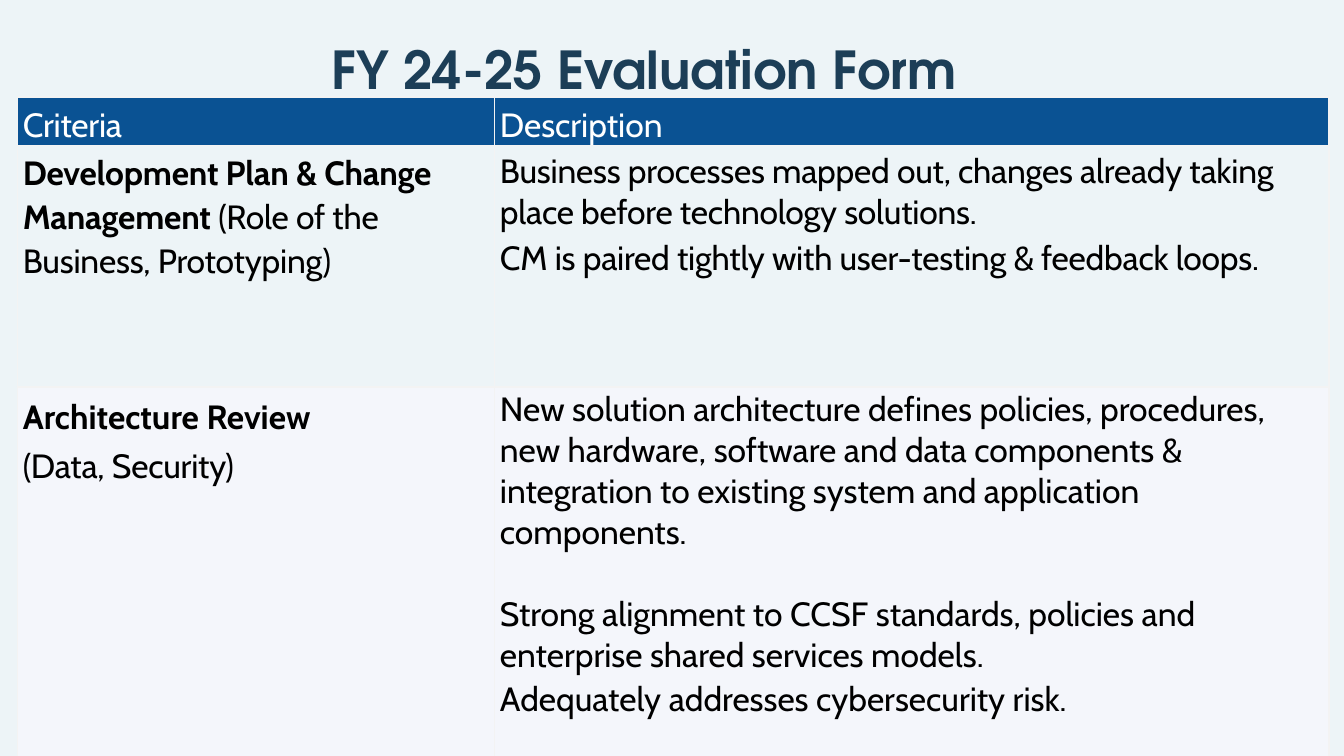
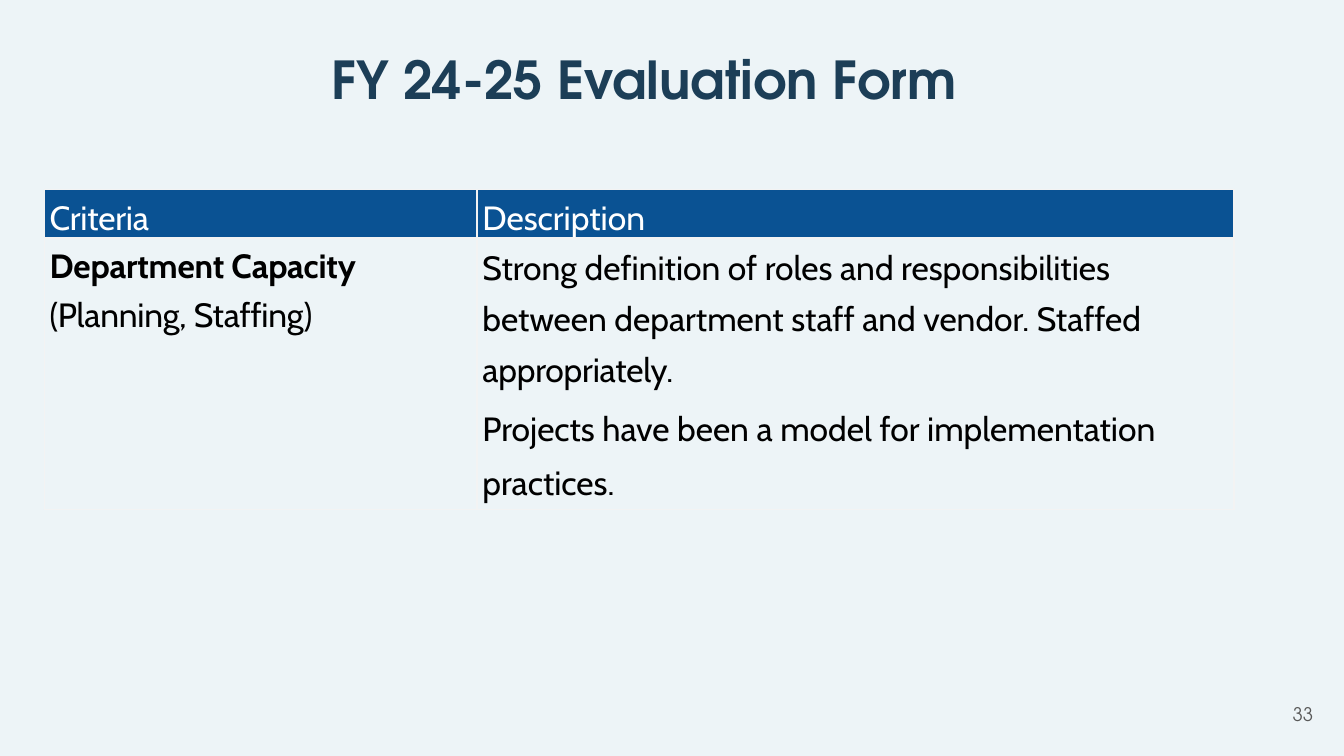
"""Builds the two evaluation form slides with their criteria tables."""
from lxml import etree
from pptx import Presentation
from pptx.dml.color import RGBColor
from pptx.enum.text import MSO_ANCHOR, PP_ALIGN
from pptx.oxml.ns import qn
from pptx.util import Inches, Pt

CENTER, RIGHT = PP_ALIGN.CENTER, PP_ALIGN.RIGHT
TOP, MIDDLE = MSO_ANCHOR.TOP, MSO_ANCHOR.MIDDLE

BACKGROUND = RGBColor(0xED, 0xF4, 0xF7)
NAVY = RGBColor(0x1C, 0x3E, 0x57)
HEADER_BLUE = RGBColor(0x0A, 0x52, 0x93)
BAND = RGBColor(0xF4, 0xF6, 0xFB)
BORDER = RGBColor(0xF3, 0xF3, 0xF3)
GREY = RGBColor(0x59, 0x59, 0x59)
WHITE = RGBColor(0xFF, 0xFF, 0xFF)
BLACK = RGBColor(0, 0, 0)

TITLE_FONT, BODY_FONT = "TeX Gyre Adventor", "Cabin"
TITLE = "FY 24-25 Evaluation Form "
HEADINGS = (("Criteria", -0.1), ("Description", 0))

# Each paragraph: bold part, regular part, line spacing, points before, tracking.
FORMS = [
    {
        "title_top": 0.18, "table_at": (0.13, 0.72),
        "columns": (3.55, 6.21), "heights": (0.36, 1.8, 2.77), "number": None,
        "rows": [
            {"fill": None, "insets": (0.04, 0.04), "cells": (
                [("Development Plan & Change Management ",
                  "(Role of the Business, Prototyping)", 1.07, 3, -0.1)],
                [("", "Business processes mapped out, changes already taking "
                      "place before technology solutions.", 1, 3, -0.1),
                 ("", "CM is paired tightly with user-testing & feedback loops.",
                  1, 3, -0.1)],
            )},
            {"fill": BAND, "insets": (0.05, 0.01), "cells": (
                [("Architecture Review", "", 1.07, 3.8, 0),
                 ("", "(Data, Security)", 1.07, 2.8, -0.1)],
                [("", "New solution architecture defines policies, procedures, "
                      "new hardware, software and data components & integration "
                      "to existing system and application components.", 1, 0.8, 0),
                 ("", "Strong alignment to CCSF standards, policies and "
                      "enterprise shared services models.", 1, 22, 0),
                 ("", "Adequately addresses cybersecurity risk.", 1, 1.6, 0)],
            )},
        ],
    },
    {
        "title_top": 0.25, "table_at": (0.33, 1.41),
        "columns": (3.22, 5.63), "heights": (0.35, 2.02), "number": "33",
        "rows": [
            {"fill": None, "insets": (0.04, 0), "cells": (
                [("Department Capacity", "", 1.07, 3, -0.1),
                 ("", "(Planning, Staffing)", 1.07, 2.8, -0.1)],
                [("", "Strong definition of roles and responsibilities between "
                      "department staff and vendor. Staffed", 1.25, 0.3, 0),
                 ("", "appropriately.", 1.07, 3.4, -0.1),
                 ("", "Projects have been a model for implementation practices.",
                  1.31, 3, 0)],
            )},
        ],
    },
]


def style(run, font, size, color, bold=False, tracking=0):
    run.font.name = font
    run.font.size = Pt(size)
    run.font.color.rgb = color
    run.font.bold = bold
    run._r.get_or_add_rPr().set("spc", str(round(tracking * 100)))


def add_label(slide, text, box, size, color, align, anchor, bold=False):
    frame = slide.shapes.add_textbox(*map(Inches, box)).text_frame
    frame.word_wrap = True
    frame.vertical_anchor = anchor
    frame.margin_left = frame.margin_right = Inches(0.1)
    frame.margin_top = frame.margin_bottom = Inches(0.1)
    frame.text = text
    paragraph = frame.paragraphs[0]
    paragraph.alignment = align
    style(paragraph.runs[0], TITLE_FONT, size, color, bold)


def add_borders(cell):
    properties = cell._tc.get_or_add_tcPr()
    for index, side in enumerate(("lnL", "lnR", "lnT", "lnB")):
        line = etree.Element(qn(f"a:{side}"), w=str(Pt(1)))
        fill = etree.SubElement(line, qn("a:solidFill"))
        etree.SubElement(fill, qn("a:srgbClr"), val=str(BORDER))
        properties.insert(index, line)


def fill_cell(cell, paragraphs, fill, color, top_inset):
    cell.margin_left, cell.margin_right = Inches(0.04), Inches(0.01)
    cell.margin_top, cell.margin_bottom = Inches(top_inset), 0
    if fill is None:
        cell.fill.background()
    else:
        cell.fill.solid()
        cell.fill.fore_color.rgb = fill
    add_borders(cell)
    frame = cell.text_frame
    for index, (strong, plain, spacing, before, tracking) in enumerate(paragraphs):
        paragraph = frame.add_paragraph() if index else frame.paragraphs[0]
        paragraph.line_spacing = spacing
        paragraph.space_before = Pt(before)
        for text, bold in ((strong, True), (plain, False)):
            if text:
                run = paragraph.add_run()
                run.text = text
                style(run, BODY_FONT, 18, color, bold, tracking)


def add_criteria(slide, form):
    columns, heights = form["columns"], form["heights"]
    box = (*form["table_at"], sum(columns), sum(heights))
    table = slide.shapes.add_table(
        len(heights), len(columns), *map(Inches, box)).table
    table.horz_banding = False
    for column, width in zip(table.columns, columns):
        column.width = Inches(width)
    for row, height in zip(table.rows, heights):
        row.height = Inches(height)
    for cell, (heading, tracking) in zip(table.rows[0].cells, HEADINGS):
        fill_cell(cell, [("", heading, 1.07, 2.6, tracking)],
                  HEADER_BLUE, WHITE, 0.04)
    for number, row in enumerate(form["rows"], start=1):
        for cell, paragraphs, inset in zip(
                table.rows[number].cells, row["cells"], row["insets"]):
            fill_cell(cell, paragraphs, row["fill"], BLACK, inset)


def main():
    deck = Presentation()
    deck.slide_width = Inches(10)
    deck.slide_height = deck.slide_width * 9 // 16
    for form in FORMS:
        slide = deck.slides.add_slide(deck.slide_layouts[6])
        slide.background.fill.solid()
        slide.background.fill.fore_color.rgb = BACKGROUND
        add_label(slide, TITLE, (0.42, form["title_top"], 8.85, 0.68),
                  28, NAVY, CENTER, TOP, bold=True)
        if form["number"]:
            add_label(slide, form["number"], (9.27, 5.1, 0.6, 0.43),
                      10, GREY, RIGHT, MIDDLE)
        add_criteria(slide, form)
    deck.save("out.pptx")


if __name__ == "__main__":
    main()
